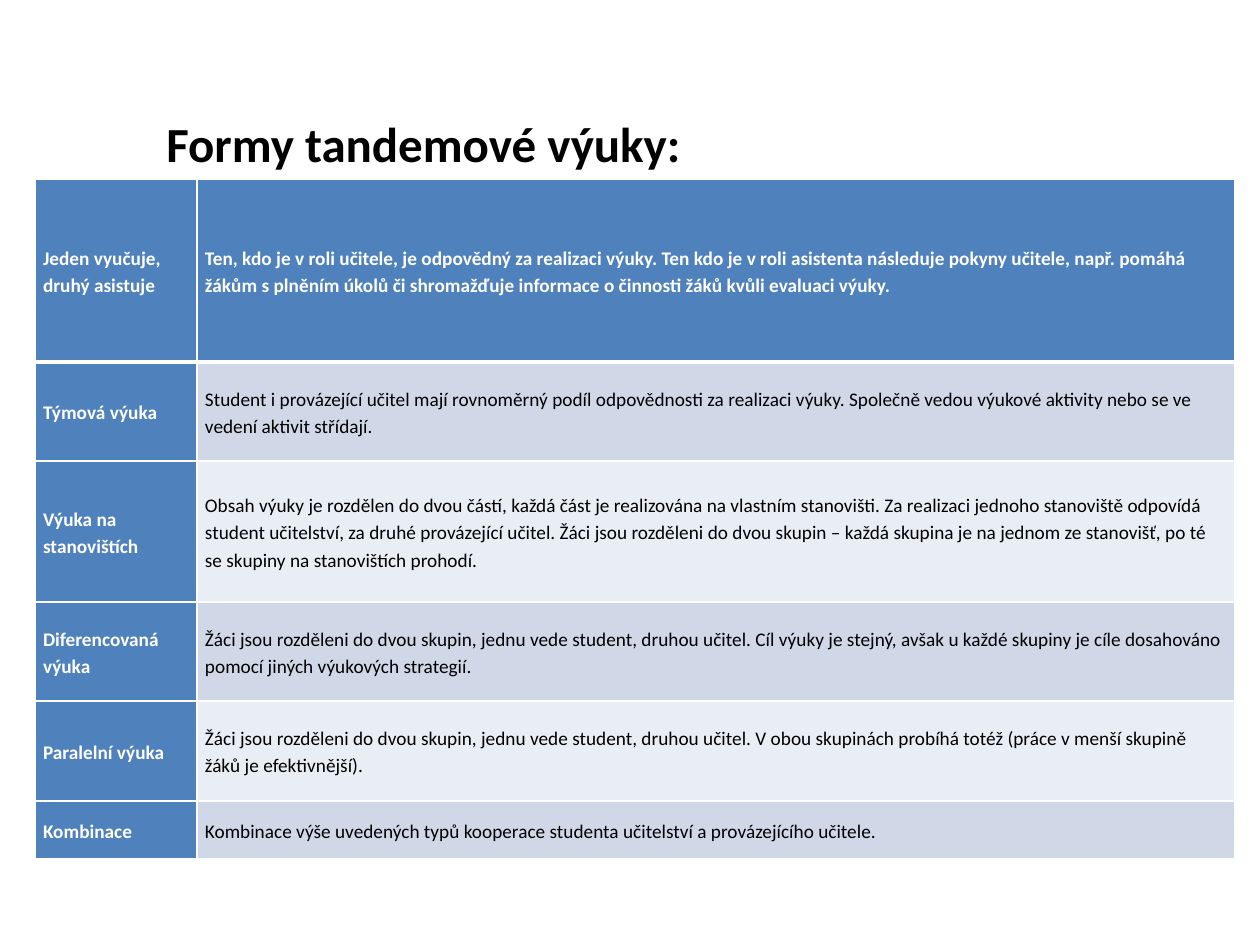
from lxml import etree
from pptx import Presentation
from pptx import util as u
from pptx.dml.color import RGBColor
from pptx.enum import text
from pptx.oxml import ns

PX = 914400 // 126
COLORS = {"white": "FFFFFF", "black": "000000", "blue": "4F81BD",
          "band": "D0D8E8", "pale": "E9EDF4"}
FONT = "Calibri"
TITLE = "Formy tandemové výuky:"
TITLE_BOX = (154, 107, 546, 72)
TABLE_LEFT, TABLE_TOP = 35, 179
COLUMN_WIDTHS = (162, 1038)
FORMS = [
    (183, "Jeden vyučuje, druhý asistuje",
     "Ten, kdo je v roli učitele, je odpovědný za realizaci výuky. Ten kdo je v roli asistenta následuje pokyny učitele, např. pomáhá žákům s plněním úkolů či shromažďuje informace o činnosti žáků kvůli evaluaci výuky."),
    (99, "Týmová výuka",
     "Student i provázející učitel mají rovnoměrný podíl odpovědnosti za realizaci výuky. Společně vedou výukové aktivity nebo se ve vedení aktivit střídají."),
    (141, "Výuka na stanovištích",
     "Obsah výuky je rozdělen do dvou částí, každá část je realizována na vlastním stanovišti. Za realizaci jednoho stanoviště odpovídá student učitelství, za druhé provázející učitel. Žáci jsou rozděleni do dvou skupin – každá skupina je na jednom ze stanovišť, po té se skupiny na stanovištích prohodí."),
    (99, "Diferencovaná výuka",
     "Žáci jsou rozděleni do dvou skupin, jednu vede student, druhou učitel. Cíl výuky je stejný, avšak u každé skupiny je cíle dosahováno pomocí jiných výukových strategií."),
    (100, "Paralelní výuka",
     "Žáci jsou rozděleni do dvou skupin, jednu vede student, druhou učitel. V obou skupinách probíhá totéž (práce v menší skupině žáků je efektivnější)."),
    (58, "Kombinace",
     "Kombinace výše uvedených typů kooperace studenta učitelství a provázejícího učitele."),
]


def px(value):
    return u.Emu(value * PX)


def add_span(para, words, size, color, bold):
    span = para.add_run()
    span.text = words
    span.font.name = FONT
    span.font.size = u.Pt(size)
    span.font.bold = bold
    span.font.color.rgb = RGBColor.from_string(COLORS[color])


def set_borders(cell, widths):
    properties = cell._tc.get_or_add_tcPr()
    for index, (side, width) in enumerate(widths.items()):
        line = etree.Element(ns.qn("a:ln" + side), w=str(u.Pt(width)))
        fill = etree.SubElement(line, ns.qn("a:solidFill"))
        etree.SubElement(fill, ns.qn("a:srgbClr"), val=COLORS["white"])
        properties.insert(index, line)


def fill_cell(cell, words, row, column):
    strong = row == 0 or column == 0
    background = "blue" if strong else "band" if row % 2 else "pale"
    cell.fill.solid()
    cell.fill.fore_color.rgb = RGBColor.from_string(COLORS[background])
    cell.vertical_anchor = text.MSO_ANCHOR.MIDDLE
    cell.margin_left = cell.margin_right = px(8)
    cell.margin_top = cell.margin_bottom = px(5)
    para = cell.text_frame.paragraphs[0]
    para.line_spacing = 1.15
    para.space_after = u.Pt(10)
    add_span(para, words, 11, "white" if strong else "black", strong)
    set_borders(cell, {"L": 1, "R": 1, "T": 3 if row == 1 else 1,
                       "B": 3 if row == 0 else 1})


def add_forms_table(page):
    heights = [form[0] for form in FORMS]
    frame = page.shapes.add_table(
        len(FORMS), len(COLUMN_WIDTHS), px(TABLE_LEFT), px(TABLE_TOP),
        px(sum(COLUMN_WIDTHS)), px(sum(heights)))
    table = frame.table
    table.first_col = True
    for column, width in zip(table.columns, COLUMN_WIDTHS):
        column.width = px(width)
    for row, (height, *cells) in enumerate(FORMS):
        table.rows[row].height = px(height)
        for column, words in enumerate(cells):
            fill_cell(table.cell(row, column), words, row, column)


def add_title(page):
    box = page.shapes.add_textbox(*map(px, TITLE_BOX))
    box.text_frame.word_wrap = False
    box.text_frame.auto_size = text.MSO_AUTO_SIZE.SHAPE_TO_FIT_TEXT
    add_span(box.text_frame.paragraphs[0], TITLE, 28, "black", True)


def main():
    deck = Presentation()
    deck.slide_width, deck.slide_height = px(1260), px(945)
    page = deck.slides.add_slide(deck.slide_layouts[6])
    add_forms_table(page)
    add_title(page)
    deck.save("out.pptx")


if __name__ == "__main__":
    main()
